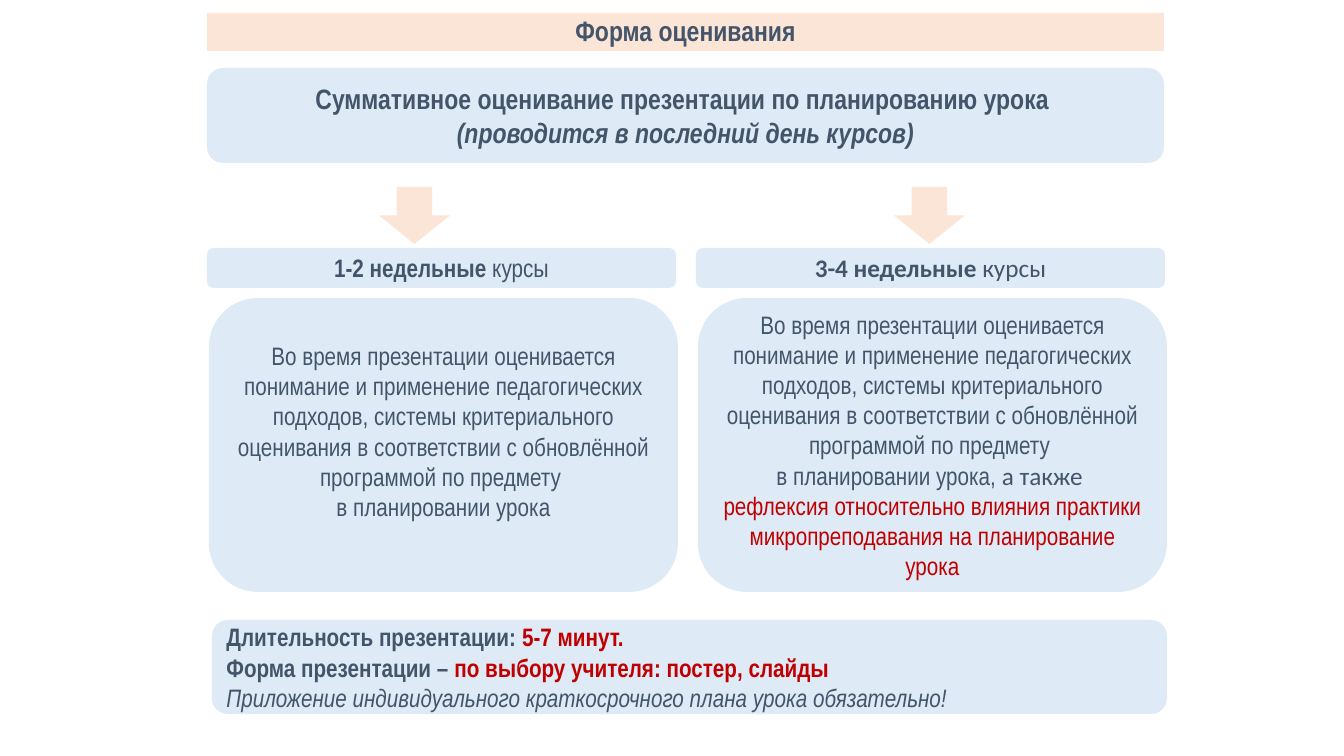
from pptx import Presentation
from pptx.dml.color import RGBColor
from pptx.enum.shapes import MSO_SHAPE
from pptx.enum.text import MSO_ANCHOR, PP_ALIGN
from pptx.util import Emu, Pt

RECTANGLE = MSO_SHAPE.RECTANGLE
ROUNDED = MSO_SHAPE.ROUNDED_RECTANGLE
DOWN_ARROW = MSO_SHAPE.DOWN_ARROW
MIDDLE = MSO_ANCHOR.MIDDLE
CENTER, LEFT = PP_ALIGN.CENTER, PP_ALIGN.LEFT

EMU_PER_PX = 914400 / 100.8
PEACH, BLUE, SLATE, RED = "FBE5D6", "DEEBF7", "44546A", "C00000"
NARROW, CALIBRI = "Arial Narrow", "Calibri"

BOLD = {"bold": True}
ITALIC = {"italic": True}
BOLD_RED = {"bold": True, "color": RED}

COLUMN_LEFT, COLUMN_STEP, COLUMN_WIDTH = 207, 489, 469
ARROW_LEFTS = (379, 894)

ASSESSED = ("Во время презентации оценивается понимание и применение "
            "педагогических подходов, системы критериального оценивания "
            "в соответствии с обновлённой программой по предмету ")
REFLECTION = ("рефлексия относительно влияния практики "
              "микропреподавания на планирование урока")

# Each column: heading spans, body paragraphs, bottom inset of the body
COLUMNS = [
    (
        [("1-2 недельные ", BOLD), ("курсы", {})],
        [[(ASSESSED, {})], [("в планировании урока", {})]],
        33,
    ),
    (
        [("3-4 недельные ", {"bold": True, "name": CALIBRI}),
         ("курсы", {"name": CALIBRI})],
        [
            [(ASSESSED, {})],
            [("в планировании урока, ", {}), ("а также ", {"name": CALIBRI})],
            [(REFLECTION, {"color": RED})],
        ],
        5,
    ),
]


def px(length):
    return Emu(round(length * EMU_PER_PX))


def rgb(color):
    return RGBColor.from_string(color)


def add_block(page, kind, bounds, fill):
    block = page.shapes.add_shape(kind, *map(px, bounds))
    block.shadow.inherit = False
    block.fill.solid()
    block.fill.fore_color.rgb = rgb(fill)
    block.line.fill.background()
    return block


def write(block, paragraphs, size=18, align=CENTER, spacing=1.0, bottom=5):
    """Fill a block with paragraphs, each a list of (text, format) spans."""
    frame = block.text_frame
    frame.word_wrap = True
    frame.vertical_anchor = MIDDLE
    frame.margin_bottom = px(bottom)
    for index, spans in enumerate(paragraphs):
        para = frame.add_paragraph() if index else frame.paragraphs[0]
        para.alignment = align
        para.line_spacing = spacing
        for text, changes in spans:
            span = para.add_run()
            span.text = text
            values = {"name": NARROW, "size": Pt(size), "bold": False,
                      "italic": False, "color": SLATE} | changes
            span.font.color.rgb = rgb(values.pop("color"))
            for attribute, value in values.items():
                setattr(span.font, attribute, value)


def add_column(page, left, heading, body, bottom):
    body_box = add_block(page, ROUNDED, (left + 2, 298, COLUMN_WIDTH, 294), BLUE)
    write(body_box, body, bottom=bottom)
    heading_box = add_block(page, ROUNDED, (left, 248, COLUMN_WIDTH, 40), BLUE)
    write(heading_box, [heading])


def main():
    deck = Presentation()
    deck.slide_width, deck.slide_height = px(1344), px(756)
    page = deck.slides.add_slide(deck.slide_layouts[6])

    title = add_block(page, RECTANGLE, (207, 13, 957, 38), PEACH)
    write(title, [[("Форма оценивания", BOLD)]], size=20, spacing=0.9)

    summary = add_block(page, ROUNDED, (207, 68, 957, 95), BLUE)
    write(summary, [
        [("Суммативное оценивание презентации по планированию урока ", BOLD)],
        [("(проводится в последний день курсов)", BOLD | ITALIC)],
    ], size=20)

    for arrow_left in ARROW_LEFTS:
        add_block(page, DOWN_ARROW, (arrow_left, 187, 71, 57), PEACH)

    for index, column in enumerate(COLUMNS):
        add_column(page, COLUMN_LEFT + index * COLUMN_STEP, *column)

    footer = add_block(page, ROUNDED, (212, 620, 955, 94), BLUE)
    write(footer, [
        [("Длительность презентации: ", BOLD), ("5-7 минут.", BOLD_RED)],
        [("Форма презентации – ", BOLD),
         ("по выбору учителя: постер, слайды", BOLD_RED)],
        [("Приложение индивидуального краткосрочного плана урока обязательно!",
          ITALIC)],
    ], align=LEFT)

    deck.save("out.pptx")


if __name__ == "__main__":
    main()
